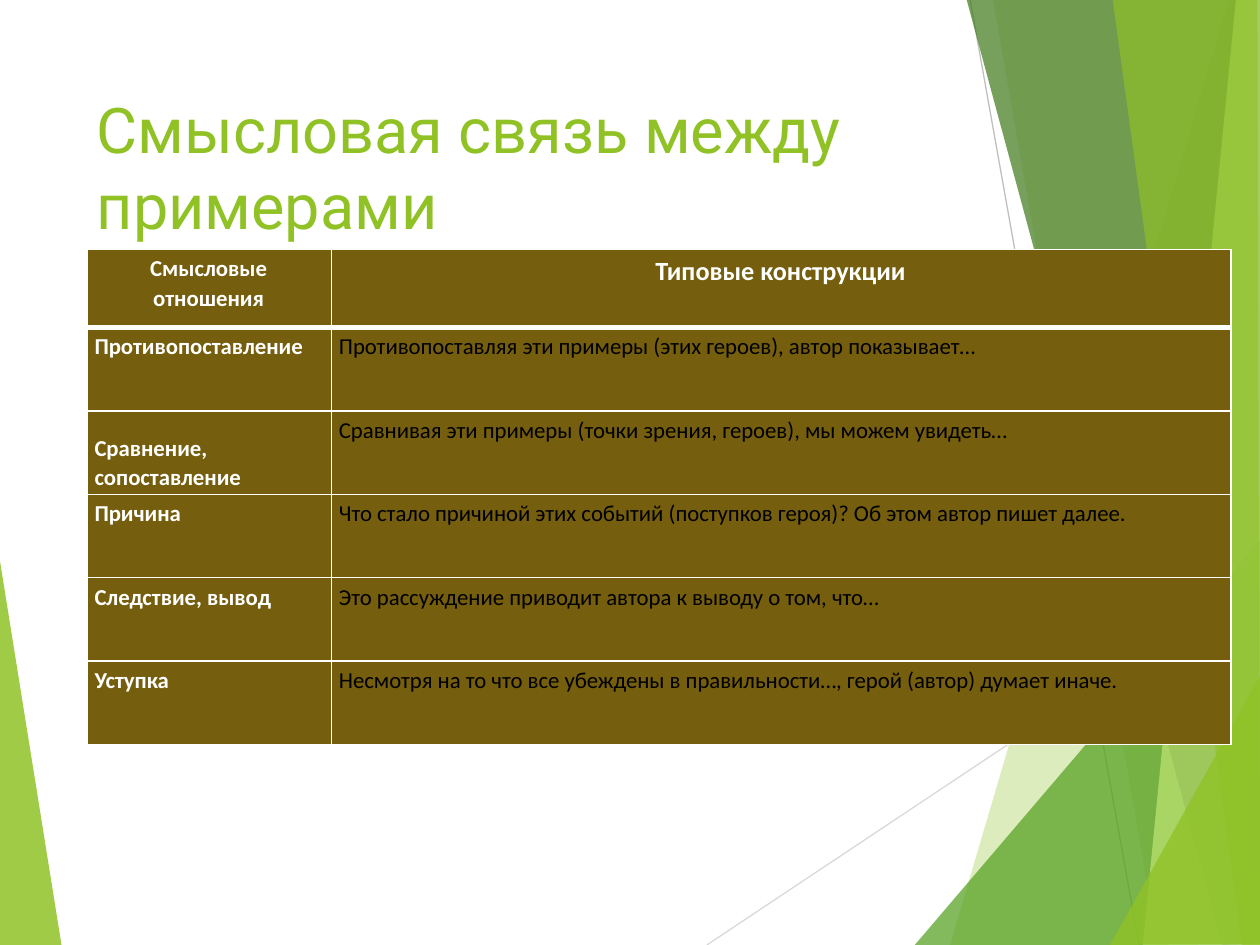
from lxml import etree
from pptx import Presentation
from pptx import util as u
from pptx.dml.color import RGBColor
from pptx.enum import shapes, text
from pptx.oxml.ns import qn

WHITE = RGBColor(0xFF, 0xFF, 0xFF)
BLACK = RGBColor(0, 0, 0)
BROWN = RGBColor(0x75, 0x5E, 0x0D)
LIME = RGBColor(0x90, 0xC2, 0x26)
PALE_LIME = RGBColor(0xC0, 0xE4, 0x74)
GREEN = RGBColor(0x54, 0xA0, 0x21)
DARK_GREEN = RGBColor(0x3F, 0x78, 0x19)
LIGHT_GREY = RGBColor(0xD9, 0xD9, 0xD9)
GREY = RGBColor(0xBF, 0xBF, 0xBF)

# Corner points in inches, colour, opacity in percent
LEFT_FACET = ([(-0.01, 4.39), (0.49, 7.51), (-0.01, 7.5)], LIME, 85)
RIGHT_FACETS = [
    ([(9.75, 0), (7.54, 7.5), (10.02, 7.51), (10.01, 0.01)], LIME, 30),
    ([(7.88, -0.01), (9.19, 7.5), (10.01, 7.5), (10.01, -0.01)], LIME, 20),
    ([(7.26, 7.5), (10, 4.29), (10.01, 7.5)], GREEN, 72),
    ([(7.67, -0.01), (9.7, 7.5), (10.01, 7.49), (10.01, -0.01)], DARK_GREEN, 70),
    ([(9.81, -0.01), (9.07, 7.5), (10.01, 7.5), (10, -0.01)], PALE_LIME, 70),
    ([(8.83, -0.01), (9.86, 7.5), (10, 7.5), (9.98, -0.01)], LIME, 65),
    ([(8.81, 7.5), (10.01, 5.35), (10.01, 7.49)], LIME, 80),
]
RAYS = [((5.61, 7.5), (10.01, 4.57), LIGHT_GREY), ((7.7, 0), (9.04, 7.5), GREY)]

HEADERS = ["Смысловые отношения", "Типовые конструкции"]
RELATIONS = [
    ("Противопоставление", "Противопоставляя эти примеры (этих героев), автор показывает…"),
    ("Сравнение, сопоставление", "Сравнивая эти примеры (точки зрения, героев), мы можем увидеть…"),
    ("Причина", "Что стало причиной этих событий (поступков героя)? Об этом автор пишет далее."),
    ("Следствие, вывод", "Это рассуждение приводит автора к выводу о том, что…"),
    ("Уступка", "Несмотря на то что все убеждены в правильности…, герой (автор) думает иначе."),
]


def add_run(p, words, font, size, color, bold=False):
    r = p.add_run()
    r.text = words
    r.font.name, r.font.size, r.font.bold = font, u.Pt(size), bold
    r.font.color.rgb = color


def add_facet(s, points, color, opacity):
    corners = [(u.Inches(x), u.Inches(y)) for x, y in points]
    fb = s.shapes.build_freeform(*corners[0])
    fb.add_line_segments(corners[1:])
    sp = fb.convert_to_shape()
    sp.shadow.inherit = False
    sp.line.fill.background()
    sp.fill.solid()
    sp.fill.fore_color.rgb = color
    clr = sp.fill._xPr.find(".//" + qn("a:srgbClr"))
    etree.SubElement(clr, qn("a:alpha"), val=str(opacity * 1000))


def add_ray(s, start, end, color):
    ends = [u.Inches(v) for v in start + end]
    cn = s.shapes.add_connector(shapes.MSO_CONNECTOR.STRAIGHT, *ends)
    cn.line.color.rgb, cn.line.width = color, u.Pt(0.75)
    etree.SubElement(cn._element.spPr, qn("a:effectLst"))


def add_backdrop(s):
    add_facet(s, *LEFT_FACET)
    for ray in RAYS:
        add_ray(s, *ray)
    for facet in RIGHT_FACETS:
        add_facet(s, *facet)


def add_title(s, x, y, w, h):
    tf = s.shapes.add_textbox(x, y, w, h).text_frame
    tf.word_wrap = True
    tf.vertical_anchor = text.MSO_ANCHOR.TOP
    add_run(tf.paragraphs[0], "Смысловая связь между примерами", "Roboto", 36, LIME)


def set_borders(cell, **widths):
    """Draw white borders; widths are points keyed by side (L, R, T, B)."""
    tcPr = cell._tc.get_or_add_tcPr()
    for i, (side, width) in enumerate(widths.items()):
        ln = etree.Element(qn("a:ln" + side), w=str(u.Pt(width)))
        fill = etree.SubElement(ln, qn("a:solidFill"))
        etree.SubElement(fill, qn("a:srgbClr"), val=str(WHITE))
        tcPr.insert(i, ln)


def fill_cell(cell, words, size, color, bold, align):
    cell.margin_left, cell.margin_top = u.Inches(0.06), u.Inches(0.03)
    cell.margin_right, cell.margin_bottom = u.Inches(0.07), u.Inches(0.02)
    cell.fill.solid()
    cell.fill.fore_color.rgb = BROWN
    p = cell.text_frame.paragraphs[0]
    p.alignment, p.line_spacing = align, 1.07
    add_run(p, words, "Calibri", size, color, bold)


def add_relations_table(s, x, y, w, h):
    rows = [HEADERS] + RELATIONS
    tbl = s.shapes.add_table(len(rows), 2, x, y, w, h).table
    tbl.columns[0].width = u.Inches(1.94)
    tbl.columns[1].width = w - u.Inches(1.94)
    head_h = u.Inches(0.62)
    for i, row in enumerate(rows):
        tbl.rows[i].height = head_h if i == 0 else (h - head_h) // len(RELATIONS)
        for j, words in enumerate(row):
            cell, header = tbl.cell(i, j), i == 0
            fill_cell(cell, words, 15 if header and j else 13,
                      WHITE if header or j == 0 else BLACK, header or j == 0,
                      text.PP_ALIGN.CENTER if header else text.PP_ALIGN.LEFT)
            set_borders(cell, L=1, R=1, T=3 if i == 1 else 1, B=3 if header else 1)
    tbl.cell(2, 0).vertical_anchor = text.MSO_ANCHOR.BOTTOM


def main():
    prs = Presentation()
    prs.slide_width, prs.slide_height = u.Inches(10), u.Inches(7.5)
    s = prs.slides.add_slide(prs.slide_layouts[6])
    add_backdrop(s)
    add_title(s, u.Inches(0.67), u.Inches(0.67), u.Inches(6.94), u.Inches(1.44))
    add_relations_table(s, u.Inches(0.69), u.Inches(1.98), u.Inches(9.08), u.Inches(3.93))
    prs.save("out.pptx")


if __name__ == "__main__":
    main()
